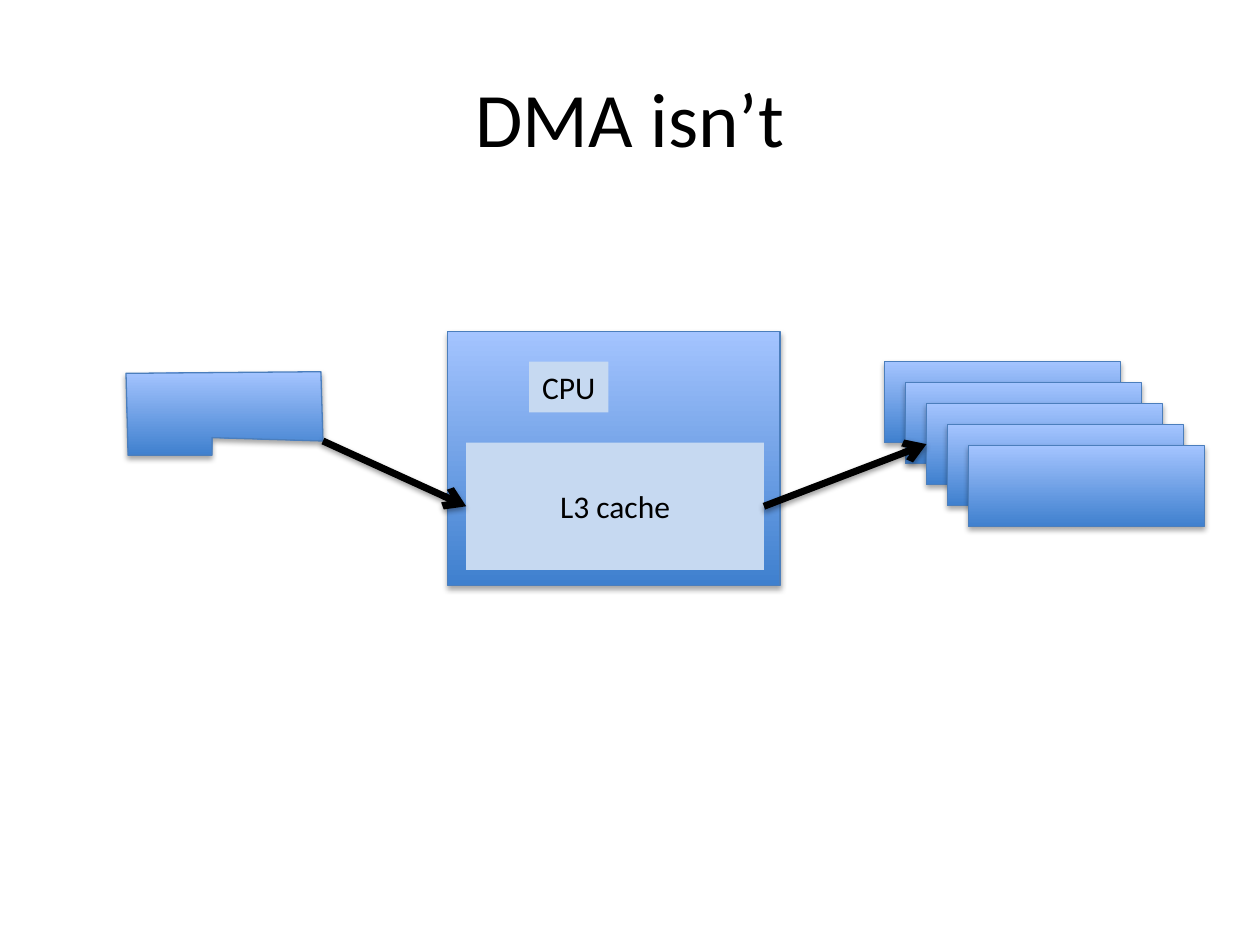
from lxml.etree import SubElement
from pptx import Presentation
from pptx.dml.color import RGBColor
from pptx.enum.shapes import MSO_CONNECTOR as Connector, MSO_SHAPE as Shape
from pptx.enum.text import MSO_ANCHOR as Anchor, PP_ALIGN as Align
from pptx.oxml.ns import qn
from pptx.util import Inches, Pt

COLUMNS, ROWS = 60, 45
LEFT, RIGHT = 1, 3  # connection sites of a rectangle


def color(hex_code):
    return RGBColor.from_string(hex_code)


def write(shape, text, size=18, font="Calibri", ink="000000", wrap=True):
    frame = shape.text_frame
    frame.word_wrap = wrap
    frame.vertical_anchor = Anchor.MIDDLE
    paragraph = frame.paragraphs[0]
    paragraph.alignment = Align.CENTER
    run = paragraph.add_run()
    run.text = text
    run.font.name, run.font.size = font, Pt(size)
    run.font.color.rgb = color(ink)


def cast_shadow(properties, distance, opacity):
    effects = properties.find(qn("a:effectLst"))
    if effects is None:
        effects = SubElement(properties, qn("a:effectLst"))
    shadow = SubElement(effects, qn("a:outerShdw"), blurRad="40000",
                        dist=str(distance), dir="5400000", rotWithShape="0")
    black = SubElement(shadow, qn("a:srgbClr"), val="000000")
    SubElement(black, qn("a:alpha"), val=str(opacity * 1000))


class Diagram:
    """Draws on one slide; lengths are columns and rows of the grid."""

    dark, light, edge, pale, ink = "3F80CE", "A4C4FF", "4B7EBC", "C6D9F1", "000000"

    def __init__(self, deck):
        self.slide = deck.slides.add_slide(deck.slide_layouts[6])
        self.shapes = self.slide.shapes
        self.column = deck.slide_width / COLUMNS
        self.row = deck.slide_height / ROWS

    def place(self, x, y):
        return round(x * self.column), round(y * self.row)

    def title(self, text, x, y, width, height):
        box = self.shapes.add_textbox(*self.place(x, y), *self.place(width, height))
        write(box, text, size=44)

    def glossy(self, shape):
        shape.shadow.inherit = False
        shape.fill.gradient()
        shape.fill.gradient_angle = 90
        for stop, shade in zip(shape.fill.gradient_stops, (self.dark, self.light)):
            stop.color.rgb = color(shade)
        shape.line.color.rgb = color(self.edge)
        shape.line.width = Pt(0.75)
        cast_shadow(shape.element.spPr, distance=23000, opacity=35)
        return shape

    def rectangle(self, x, y, width, height):
        return self.shapes.add_shape(Shape.RECTANGLE, *self.place(x, y),
                                     *self.place(width, height))

    def block(self, *area):
        return self.glossy(self.rectangle(*area))

    def label(self, text, *area, wrap=True):
        panel = self.rectangle(*area)
        panel.shadow.inherit = False
        panel.fill.solid()
        panel.fill.fore_color.rgb = color(self.pale)
        panel.line.fill.background()
        write(panel, text, wrap=wrap)
        return panel

    def outline(self, corners):
        start, *others = [self.place(*corner) for corner in corners]
        builder = self.shapes.build_freeform(*start)
        builder.add_line_segments(others, close=True)
        return self.glossy(builder.convert_to_shape())

    def arrow(self, target, start=(0, 0), source=None):
        point = self.place(*start)
        line = self.shapes.add_connector(Connector.STRAIGHT, *point, *point)
        if source is not None:
            line.begin_connect(source, RIGHT)
        line.end_connect(target, LEFT)
        line.line.color.rgb = color(self.ink)
        line.line.width = Pt(4)
        SubElement(line.line._get_or_add_ln(), qn("a:tailEnd"), type="arrow")
        cast_shadow(line.element.spPr, distance=20000, opacity=38)


def main():
    deck = Presentation()
    deck.slide_width, deck.slide_height = Inches(10), Inches(7.5)
    diagram = Diagram(deck)
    diagram.title("DMA isn’t", 3, 1.8, 54, 7.5)

    # Processor with its cache
    diagram.block(21.3, 15.78, 15.84, 12.1)
    diagram.label("CPU", 25.2, 17.22, 3.78, 2.42, wrap=False)
    cache = diagram.label("L3 cache", 22.2, 21.08, 14.18, 6.06)

    # Device card
    card_corner = (15.38, 21)
    diagram.outline([(6, 17.78), (15.28, 17.7), card_corner,
                     (10.1, 20.84), (10.1, 21.68), (6.1, 21.68)])

    # Memory modules, each one cell further right and down
    memory = [diagram.block(42.12 + step, 17.22 + step, 11.24, 3.86)
              for step in range(5)]

    # Data flow through the cache
    diagram.arrow(cache, start=card_corner)
    diagram.arrow(memory[2], source=cache)

    deck.save("out.pptx")


if __name__ == "__main__":
    main()
